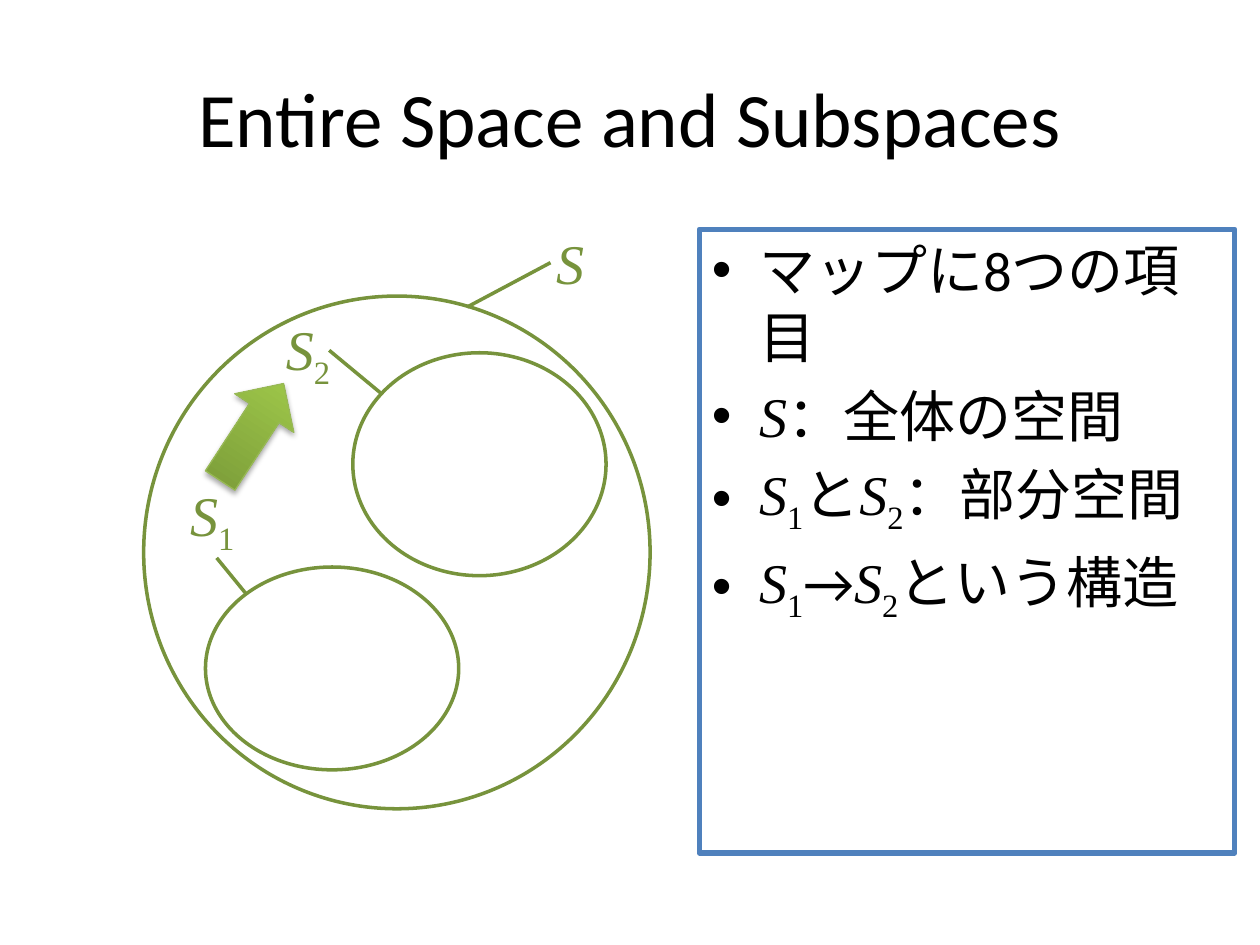
from pptx import Presentation
from pptx.dml.color import RGBColor as Rgb
from pptx.enum.shapes import MSO_SHAPE as Kind
from pptx.enum.text import MSO_ANCHOR as Anchor, PP_ALIGN as Align
from pptx.oxml import parse_xml
from pptx.util import Pt

HUES = {"ink": "000000", "green": "77933C", "blue": "4F81BD",
        "dark": "779737", "light": "9BC348", "edge": "98B955"}
SANS, SERIF = "Calibri", "Times New Roman"
SHADE = (
    '<a:effectLst xmlns:a="http://schemas.openxmlformats.org/drawingml/2006/main">'
    '<a:outerShdw blurRad="40000" dist="23000" dir="5400000" rotWithShape="0">'
    '<a:srgbClr val="000000"><a:alpha val="35000"/></a:srgbClr>'
    '</a:outerShdw></a:effectLst>')


class Board:
    def __init__(self, slide):
        self.slide = slide

    def hue(self, name):
        return Rgb.from_string(HUES[name])

    def place(self, shape, box):
        shape.left, shape.top, shape.width, shape.height = map(Pt, box)

    def edge(self, shape, hue, width):
        shape.line.color.rgb = self.hue(hue)
        shape.line.width = Pt(width)

    def run(self, para, text, size, hue="ink", style=""):
        """Style: v is an italic variable, n its subscript number."""
        run = para.add_run()
        run.text = text
        font = run.font
        font.size, font.color.rgb = Pt(size), self.hue(hue)
        font.name = SERIF if style else SANS
        if style == "v":
            font.italic = True
        elif style == "n":
            font._element.set("baseline", "-25000")

    def title(self, text, box):
        shape = self.slide.shapes.title
        self.place(shape, box)
        shape.text_frame.vertical_anchor = Anchor.MIDDLE
        para = shape.text_frame.paragraphs[0]
        para.alignment = Align.CENTER
        self.run(para, text, 44)

    def bullets(self, items, box):
        shape = self.slide.placeholders[1]
        self.place(shape, box)
        self.edge(shape, "blue", 3)
        frame = shape.text_frame
        for i, item in enumerate(items):
            para = frame.add_paragraph() if i else frame.paragraphs[0]
            for text, style in item:
                self.run(para, text, 32, style=style)

    def shape(self, kind, box, hue="green", width=2):
        shape = self.slide.shapes.add_shape(kind, *map(Pt, box))
        shape.shadow.inherit = False
        shape.fill.background()
        self.edge(shape, hue, width)
        return shape

    def label(self, parts, box, line):
        shape = self.shape(Kind.LINE_CALLOUT_1_NO_BORDER, box)
        for i, value in enumerate(line):
            shape.adjustments[i] = value
        frame = shape.text_frame
        frame.margin_left = frame.margin_right = 0
        frame.margin_top = frame.margin_bottom = 0
        frame.word_wrap = False
        frame.vertical_anchor = Anchor.MIDDLE
        para = frame.paragraphs[0]
        para.alignment = Align.CENTER
        for text, style in parts:
            self.run(para, text, 32, "green", style)

    def arrow(self, box, turn):
        shape = self.shape(Kind.UP_ARROW, box, "edge", 0.75)
        shape.rotation = turn
        fill = shape.fill
        fill.gradient()
        fill.gradient_angle = 90
        for stop, pos, hue in zip(fill.gradient_stops, (0, 0.8), ("dark", "light")):
            stop.position, stop.color.rgb = pos, self.hue(hue)
        props = shape._element.spPr
        for old in props.xpath("a:effectLst"):
            props.replace(old, parse_xml(SHADE))


def main():
    deck = Presentation()
    deck.slide_width, deck.slide_height = Pt(720), Pt(540)
    board = Board(deck.slides.add_slide(deck.slide_layouts[1]))
    whole = [("S", "v")]
    first, second = whole + [("1", "n")], whole + [("2", "n")]

    # Title and list
    board.title("Entire Space and Subspaces", (36, 21.6, 648, 90))
    board.bullets([
        [("マップに8つの項目", "")],
        whole + [("：全体の空間", "")],
        first + [("と", "")] + second + [("：部分空間", "")],
        first + [("→", "")] + second + [("という構造", "")],
    ], (399.6, 131, 306, 356.4))

    # Entire space, then its two subspaces, each with a label
    spaces = [
        ((82.1, 169.2, 289.4, 293), whole,
         (314.6, 130.3, 22.3, 38.9), (0.51, -0.002, 1.162, -2.136)),
        ((201.6, 201.6, 144.7, 127.4), second,
         (162.7, 182.2, 26.6, 38.9), (0.463, 0.957, 1.089, 2.061)),
        ((117.4, 324, 144.7, 115.9), first,
         (108, 277.2, 26.6, 38.9), (1.07, 0.597, 1.592, 1.221)),
    ]
    for oval, name, box, line in spaces:
        board.shape(Kind.OVAL, oval)
        board.label(name, box, line)

    # Arrow from the first subspace to the second
    board.arrow((123.8, 213.8, 40.3, 66.2), 33.2)
    deck.save("out.pptx")


if __name__ == "__main__":
    main()
